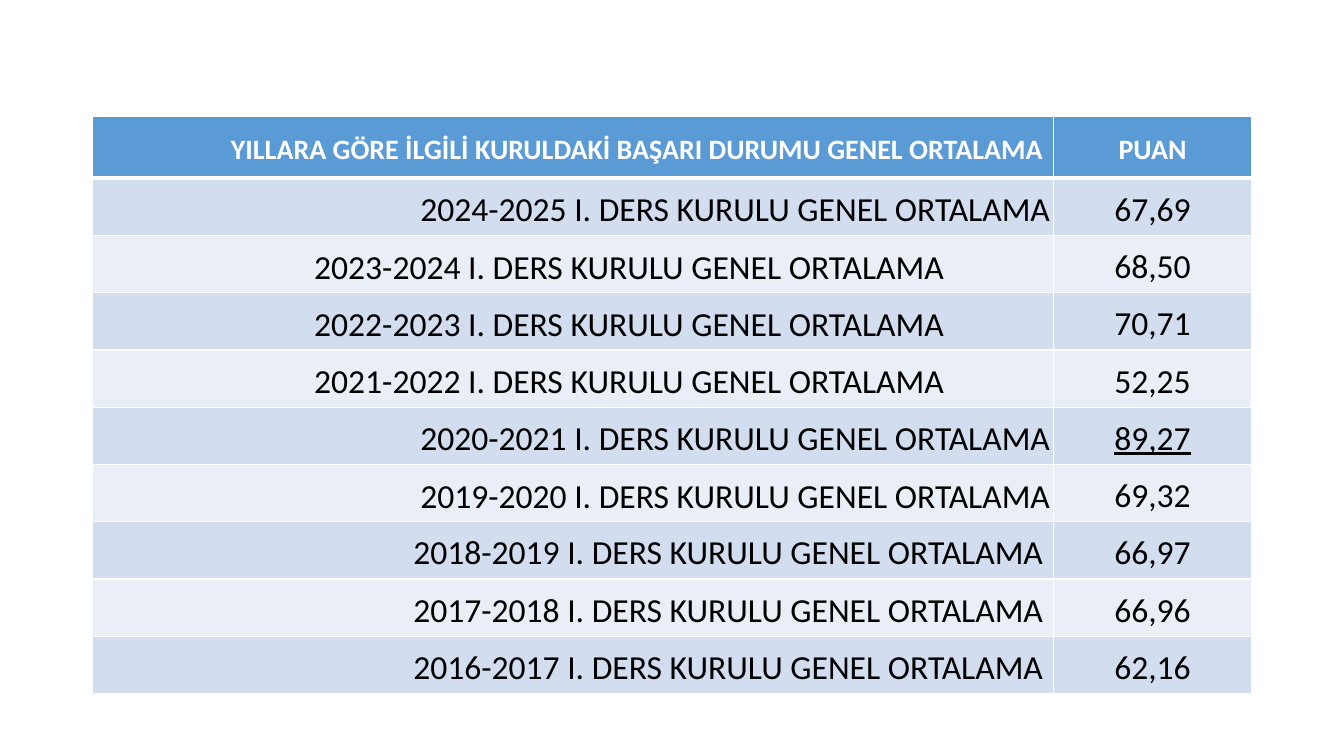
from lxml import etree
from pptx import Presentation
from pptx.dml.color import RGBColor
from pptx.enum import text
from pptx.oxml import ns
from pptx.util import Pt

WHITE = RGBColor(0xFF, 0xFF, 0xFF)
BLACK = RGBColor(0x00, 0x00, 0x00)
HEADER_BLUE = RGBColor(0x5B, 0x9B, 0xD5)
BANDS = (RGBColor(0xD2, 0xDE, 0xEF), RGBColor(0xEA, 0xEF, 0xF7))

COLUMN_WIDTHS = (686.2, 141.8)
HEADER_HEIGHT, ROW_HEIGHT = 44.6, 40.8

HEADER = ("YILLARA GÖRE İLGİLİ KURULDAKİ BAŞARI DURUMU GENEL ORTALAMA", "PUAN")
LABEL = "{}-{} I. DERS KURULU GENEL ORTALAMA"
FIRST_YEAR = 2024
SCORES = ("67,69", "68,50", "70,71", "52,25", "89,27",
          "69,32", "66,97", "66,96", "62,16")
BEST_SCORE = "89,27"

# Cell margins
TIGHT = dict(margin_left=Pt(2.2), margin_top=Pt(0.7),
             margin_right=Pt(2.2), margin_bottom=Pt(0))
INDENTED = {**TIGHT, "margin_right": Pt(78)}
MARGINS = {2024: TIGHT, 2023: INDENTED, 2022: INDENTED, 2021: INDENTED,
           2020: TIGHT, 2019: TIGHT}

HEADER_FONT = dict(name="Calibri", size=Pt(20), bold=True)
BODY_FONT = dict(name="Calibri", size=Pt(24), bold=False)
ALIGNMENTS = (text.PP_ALIGN.RIGHT, text.PP_ALIGN.CENTER)


def apply_format(target, values):
    for name, value in values.items():
        setattr(target, name, value)


def add_borders(cell, bottom):
    """Draw white cell borders; they must come before the fill."""
    properties = cell._tc.get_or_add_tcPr()
    widths = (("a:lnL", 1), ("a:lnR", 1), ("a:lnT", 1), ("a:lnB", bottom))
    for tag, width in widths:
        line = etree.SubElement(properties, ns.qn(tag), w=str(Pt(width)))
        fill = etree.SubElement(line, ns.qn("a:solidFill"))
        etree.SubElement(fill, ns.qn("a:srgbClr"), val=str(WHITE))


def fill_cell(cell, words, alignment, font, color, background,
              margins=None, bottom=1):
    add_borders(cell, bottom)
    cell.fill.solid()
    cell.fill.fore_color.rgb = background
    apply_format(cell, {"vertical_anchor": text.MSO_ANCHOR.MIDDLE,
                        **(margins or {})})
    para = cell.text_frame.paragraphs[0]
    apply_format(para, dict(alignment=alignment, line_spacing=1.15))
    span = para.add_run()
    span.text = words
    apply_format(span.font, font)
    span.font.color.rgb = color


def add_score_table(page):
    row_count = len(SCORES) + 1
    height = HEADER_HEIGHT + len(SCORES) * ROW_HEIGHT
    table = page.shapes.add_table(
        row_count, len(COLUMN_WIDTHS), Pt(66.2), Pt(82.8),
        Pt(sum(COLUMN_WIDTHS)), Pt(height)).table
    for column, width in zip(table.columns, COLUMN_WIDTHS):
        column.width = Pt(width)
    for index, row in enumerate(table.rows):
        row.height = Pt(ROW_HEIGHT if index else HEADER_HEIGHT)

    # Header row
    for column, words in enumerate(HEADER):
        fill_cell(table.cell(0, column), words, ALIGNMENTS[column],
                  HEADER_FONT, WHITE, HEADER_BLUE, bottom=3)

    # One row per school year, newest first
    for index, score in enumerate(SCORES):
        year = FIRST_YEAR - index
        band = BANDS[index % 2]
        score_font = {**BODY_FONT, "underline": score == BEST_SCORE}
        fill_cell(table.cell(index + 1, 0), LABEL.format(year, year + 1),
                  ALIGNMENTS[0], BODY_FONT, BLACK, band, MARGINS.get(year))
        fill_cell(table.cell(index + 1, 1), score,
                  ALIGNMENTS[1], score_font, BLACK, band)


def main():
    deck = Presentation()
    apply_format(deck, dict(slide_width=Pt(960), slide_height=Pt(540)))
    page = deck.slides.add_slide(deck.slide_layouts[6])
    add_score_table(page)
    deck.save("out.pptx")


if __name__ == "__main__":
    main()
